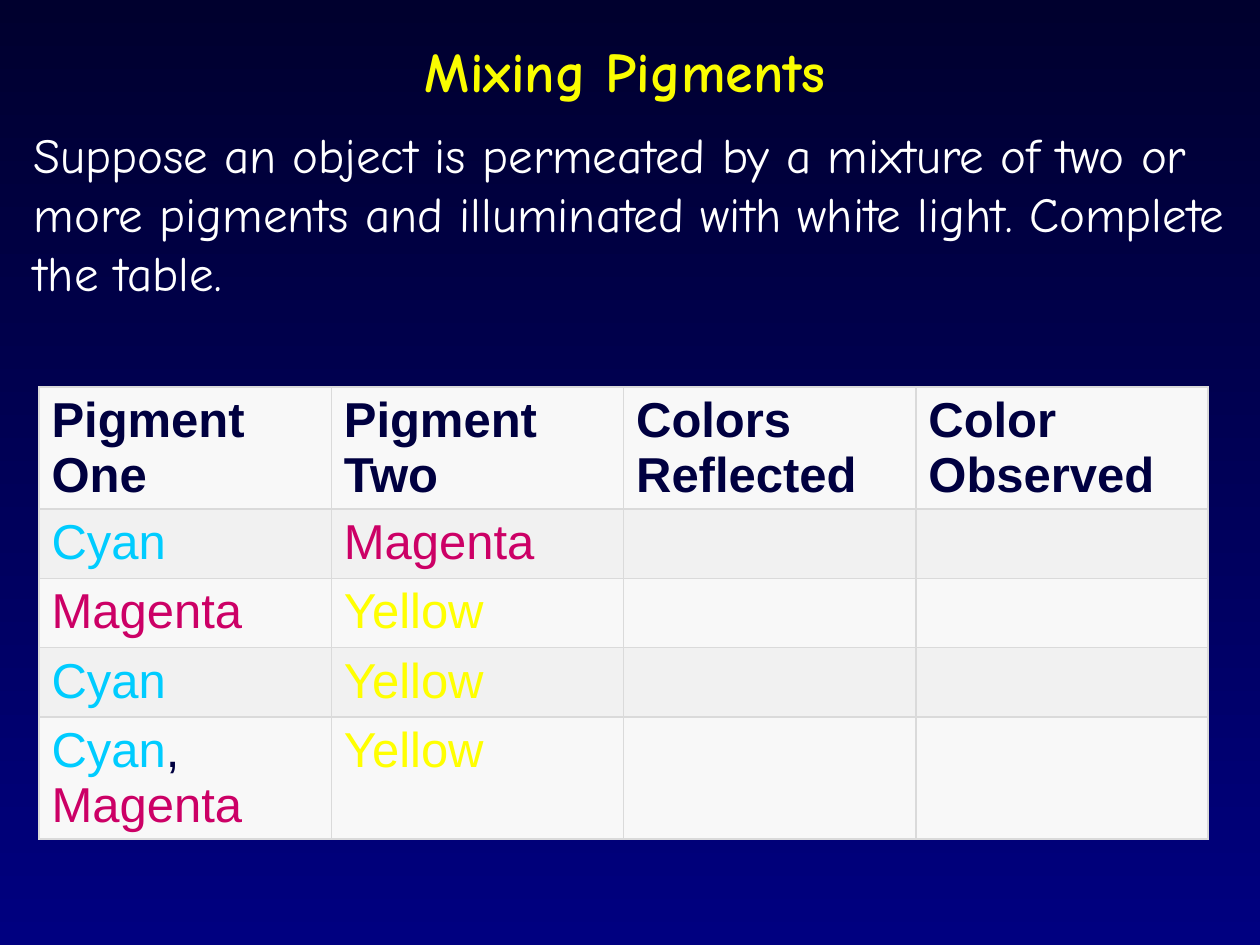
from lxml import etree
from pptx import Presentation
from pptx.dml.color import RGBColor
from pptx.enum.text import MSO_ANCHOR, MSO_AUTO_SIZE, PP_ALIGN
from pptx.oxml.ns import qn
from pptx.util import Inches, Pt

MIDDLE = MSO_ANCHOR.MIDDLE
NO_AUTOFIT = MSO_AUTO_SIZE.NONE
CENTER = PP_ALIGN.CENTER
LEFT = PP_ALIGN.LEFT

HEADING_FONT = "Comic Neue"
TABLE_FONT = "Arial"
NAVY = "000040"
BORDER = "DADADA"
ROW_FILLS = ("F8F8F8", "F1F1F1")

CYAN = ("Cyan", "00CCFF")
MAGENTA = ("Magenta", "CC0066")
YELLOW = ("Yellow", "FFFF00")
COMMA = (", ", NAVY)

HEADERS = ("Pigment One", "Pigment Two", "Colors Reflected", "Color Observed")
PIGMENT_ROWS = (
    ([CYAN], [MAGENTA], [], []),
    ([MAGENTA], [YELLOW], [], []),
    ([CYAN], [YELLOW], [], []),
    ([CYAN, COMMA, MAGENTA], [YELLOW], [], []),
)
ROW_HEIGHTS = (0.97, 0.55, 0.55, 0.55, 0.97)
COLUMN_WIDTH = 2.32


def color(value):
    return RGBColor.from_string(value)


def add_run(paragraph, text, font, size, value, bold=False):
    run = paragraph.add_run()
    run.text = text
    run.font.name = font
    run.font.size = Pt(size)
    run.font.bold = bold
    run.font.color.rgb = color(value)


def set_background(slide, top, bottom):
    fill = slide.background.fill
    fill.gradient()
    fill.gradient_angle = 270
    for stop, value in zip(fill.gradient_stops, (top, bottom)):
        stop.color.rgb = color(value)


def set_title(slide, text):
    title = slide.shapes.title
    title.left, title.top = Inches(1.05), Inches(0.25)
    title.width, title.height = Inches(7.83), Inches(0.68)
    frame = title.text_frame
    frame.auto_size = NO_AUTOFIT
    frame.vertical_anchor = MIDDLE
    paragraph = frame.paragraphs[0]
    paragraph.alignment = CENTER
    paragraph.line_spacing = 0.9
    add_run(paragraph, text, HEADING_FONT, 32, "FAFD00", True)


def add_instructions(slide, text):
    shape = slide.shapes.add_textbox(Inches(0.17), Inches(0.94), Inches(9.71), Inches(1.51))
    shape.text_frame.word_wrap = True
    add_run(shape.text_frame.paragraphs[0], text, HEADING_FONT, 28, "FFFFFF")


def set_borders(cell):
    properties = cell._tc.get_or_add_tcPr()
    for index, side in enumerate(("lnL", "lnR", "lnT", "lnB")):
        line = etree.Element(qn(f"a:{side}"), w=str(Pt(1)))
        fill = etree.SubElement(line, qn("a:solidFill"))
        etree.SubElement(fill, qn("a:srgbClr"), val=BORDER)
        properties.insert(index, line)


def fill_cell(cell, parts, background, bold):
    cell.fill.solid()
    cell.fill.fore_color.rgb = color(background)
    set_borders(cell)
    paragraph = cell.text_frame.paragraphs[0]
    paragraph.alignment = LEFT
    for text, value in parts:
        add_run(paragraph, text, TABLE_FONT, 28, value, bold)


def add_pigment_table(slide):
    rows = [[[(header, NAVY)] for header in HEADERS], *PIGMENT_ROWS]
    shape = slide.shapes.add_table(
        len(rows), len(HEADERS), Inches(0.31), Inches(3.07),
        Inches(COLUMN_WIDTH * len(HEADERS)), Inches(sum(ROW_HEIGHTS)),
    )
    table = shape.table
    for column in table.columns:
        column.width = Inches(COLUMN_WIDTH)
    for row_index, (row, height) in enumerate(zip(rows, ROW_HEIGHTS)):
        table.rows[row_index].height = Inches(height)
        for column_index, parts in enumerate(row):
            cell = table.cell(row_index, column_index)
            fill_cell(cell, parts, ROW_FILLS[row_index % 2], row_index == 0)


def main():
    presentation = Presentation()
    presentation.slide_width = Inches(10)
    presentation.slide_height = Inches(7.5)
    slide = presentation.slides.add_slide(presentation.slide_layouts[5])
    set_background(slide, "00002E", "000080")
    set_title(slide, "Mixing Pigments")
    add_pigment_table(slide)
    add_instructions(
        slide,
        "Suppose an object is permeated by a mixture of two or more pigments "
        "and illuminated with white light. Complete the table.",
    )
    presentation.save("out.pptx")


if __name__ == "__main__":
    main()
